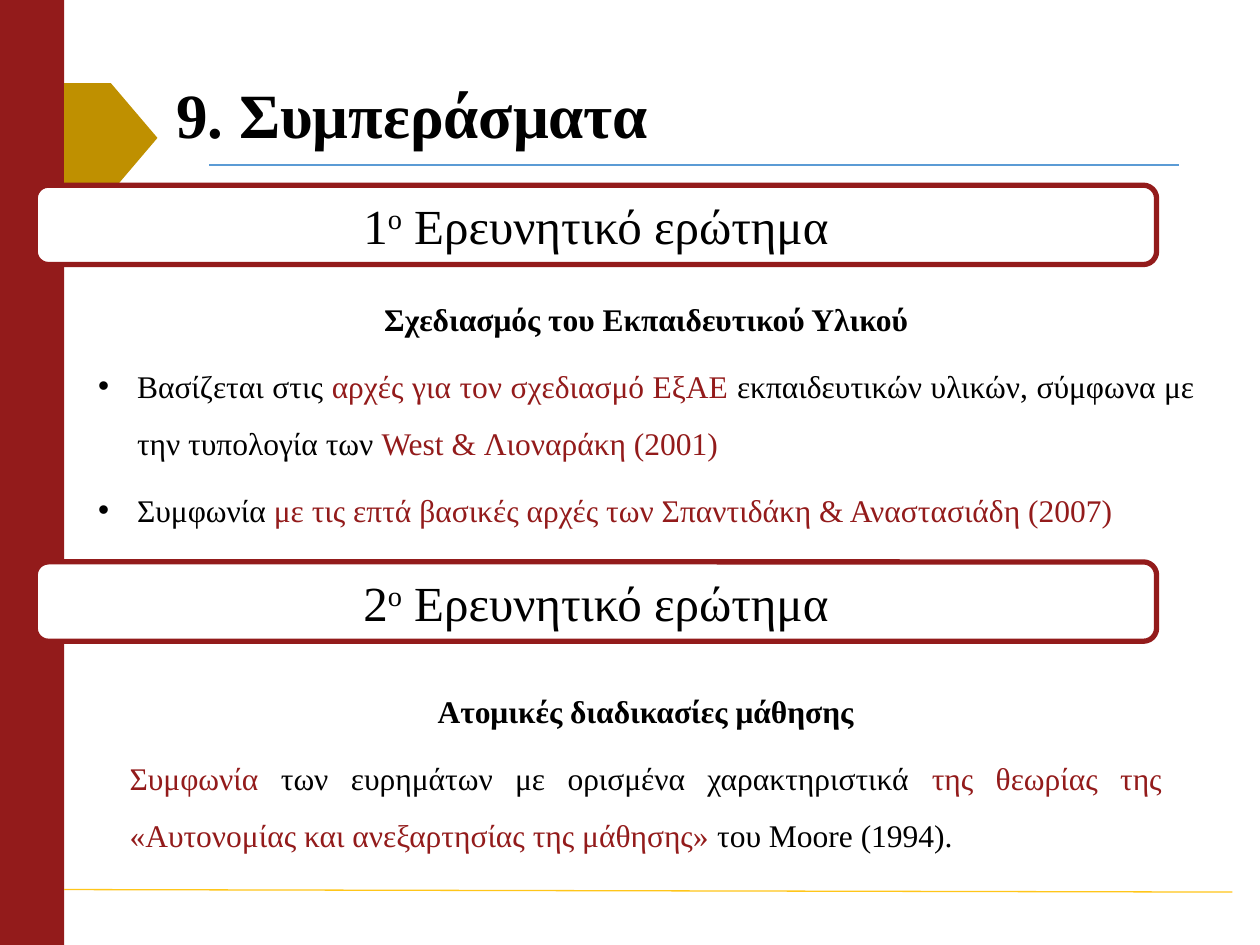
from pptx import Presentation
from pptx.dml.color import RGBColor
from pptx.enum.shapes import MSO_CONNECTOR, MSO_SHAPE
from pptx.enum.text import MSO_ANCHOR, PP_ALIGN
from pptx.oxml.ns import qn
from pptx.util import Inches, Pt
from lxml import etree

RED = RGBColor(0x93, 0x1B, 0x1B)
GOLD = RGBColor(0xBF, 0x90, 0x00)
YELLOW = RGBColor(0xFF, 0xC6, 0x1A)
BLUE = RGBColor(0x5B, 0x9B, 0xD5)
BLACK = RGBColor(0, 0, 0)
WHITE = RGBColor(0xFF, 0xFF, 0xFF)

RECT, PENTAGON, ROUNDED = MSO_SHAPE.RECTANGLE, MSO_SHAPE.PENTAGON, MSO_SHAPE.ROUNDED_RECTANGLE
STRAIGHT = MSO_CONNECTOR.STRAIGHT
MIDDLE = MSO_ANCHOR.MIDDLE
CENTER, JUSTIFY = PP_ALIGN.CENTER, PP_ALIGN.JUSTIFY

FONT = "Times New Roman"
BODY = {"line_spacing": 1.5, "space_after": Pt(6)}
HEADING = {"alignment": CENTER, **BODY}
JUSTIFIED = {"alignment": JUSTIFY, **BODY}
BULLET_INDENT = Inches(0.31)


def add_block(slide, shape_type, box, fill, line=None):
    sp = slide.shapes.add_shape(shape_type, *map(Inches, box))
    sp.shadow.inherit = False
    sp.fill.solid()
    sp.fill.fore_color.rgb = fill
    if line is None:
        sp.line.fill.background()
    else:
        sp.line.color.rgb = line
        sp.line.width = Pt(3)
    return sp


def add_rule(slide, start, end, color):
    line = slide.shapes.add_connector(STRAIGHT, *map(Inches, start + end))
    line.line.color.rgb = color
    line.line.width = Pt(0.75)
    etree.SubElement(line._element.spPr, qn("a:effectLst"))


def add_run(p, text, size, color=BLACK, bold=False):
    r = p.add_run()
    r.text = text
    for name, value in {"name": FONT, "size": Pt(size), "bold": bold}.items():
        setattr(r.font, name, value)
    r.font.color.rgb = color
    return r


def format_paragraph(p, formats):
    for name, value in formats.items():
        setattr(p, name, value)


def add_bullet(p):
    pPr = p._p.get_or_add_pPr()
    pPr.set("marL", str(BULLET_INDENT))
    pPr.set("indent", str(-BULLET_INDENT))
    etree.SubElement(pPr, qn("a:buFont")).set("typeface", "Arial")
    etree.SubElement(pPr, qn("a:buChar")).set("char", "•")


def add_text_frame(slide, box):
    tf = slide.shapes.add_textbox(*map(Inches, box)).text_frame
    tf.word_wrap = True
    return tf


def add_title(slide, text):
    tf = add_text_frame(slide, (1.3, 0.62, 8.5, 0.63))
    tf.vertical_anchor = MIDDLE
    p = tf.paragraphs[0]
    p.line_spacing = 0.9
    add_run(p, text, 36, bold=True)


def add_question(slide, top, number):
    sp = add_block(slide, ROUNDED, (0.28, top, 8.9, 0.63), WHITE, RED)
    tf = sp.text_frame
    tf.vertical_anchor = MIDDLE
    p = tf.paragraphs[0]
    p.alignment = CENTER
    add_run(p, number, 28)
    ordinal = add_run(p, "ο", 28)
    ordinal.font._element.set("baseline", "30000")
    add_run(p, " Ερευνητικό ερώτημα", 28)


def add_findings(slide, box, heading, paragraphs, bulleted=False):
    """Each paragraph is a list of (text, color) runs."""
    tf = add_text_frame(slide, box)
    p = tf.paragraphs[0]
    format_paragraph(p, HEADING)
    add_run(p, heading, 18, bold=True)
    for runs in paragraphs:
        p = tf.add_paragraph()
        format_paragraph(p, JUSTIFIED)
        if bulleted:
            add_bullet(p)
        for text, color in runs:
            add_run(p, text, 18, color)


def main():
    prs = Presentation()
    prs.slide_width, prs.slide_height = Inches(10), Inches(7.5)
    s = prs.slides.add_slide(prs.slide_layouts[6])

    # Side band, rules and title marker
    add_block(s, RECT, (0, 0, 0.51, 7.5), RED)
    add_rule(s, (1.66, 1.31), (9.36, 1.31), BLUE)
    add_rule(s, (0.51, 7.06), (9.78, 7.08), YELLOW)
    add_block(s, PENTAGON, (0.51, 0.66, 0.74, 0.87), GOLD)
    add_title(s, "9. Συμπεράσματα")

    # First research question
    add_findings(s, (0.68, 2.18, 8.9, 2.03), "Σχεδιασμός του Εκπαιδευτικού Υλικού", [
        [("Βασίζεται στις ", BLACK),
         ("αρχές για τον σχεδιασμό ΕξΑΕ ", RED),
         ("εκπαιδευτικών υλικών, σύμφωνα με την τυπολογία των ", BLACK),
         ("West & Λιοναράκη (2001)", RED)],
        [("Συμφωνία ", BLACK),
         ("με τις επτά βασικές αρχές των Σπαντιδάκη & Αναστασιάδη (2007)", RED)],
    ], bulleted=True)
    add_question(s, 1.47, "1")

    # Second research question
    add_question(s, 4.46, "2")
    add_findings(s, (0.93, 5.29, 8.39, 1.49), "Ατομικές διαδικασίες μάθησης", [
        [("Συμφωνία", RED),
         (" των ευρημάτων με ορισμένα χαρακτηριστικά ", BLACK),
         ("της θεωρίας της «Αυτονομίας και ανεξαρτησίας της μάθησης» ", RED),
         ("του Moore (1994).", BLACK)],
    ])

    prs.save("out.pptx")


if __name__ == "__main__":
    main()
